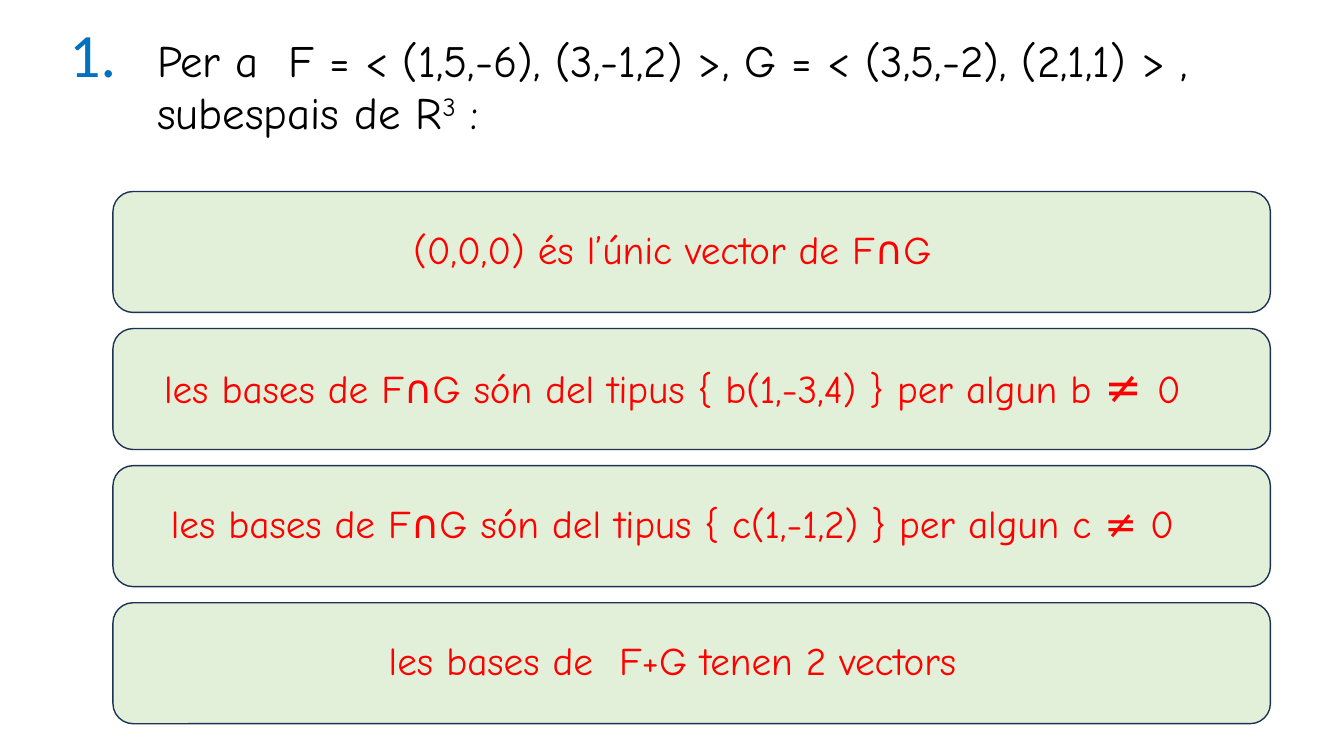
from dataclasses import dataclass

from pptx import Presentation
from pptx.dml.color import RGBColor
from pptx.enum.shapes import MSO_SHAPE
from pptx.enum.text import MSO_ANCHOR, PP_ALIGN
from pptx.util import Inches, Pt


@dataclass(frozen=True)
class Theme:
    number_font: str = "Calibri"
    text_font: str = "Comic Neue"
    number_color: RGBColor = RGBColor(0x00, 0x70, 0xC0)
    question_color: RGBColor = RGBColor(0x00, 0x00, 0x00)
    answer_color: RGBColor = RGBColor(0xFF, 0x00, 0x00)
    answer_fill: RGBColor = RGBColor(0xE2, 0xF0, 0xD9)
    answer_line: RGBColor = RGBColor(0x1E, 0x32, 0x56)
    number_size: Pt = Pt(44)
    question_size: Pt = Pt(32)
    symbol_size: Pt = Pt(32)
    answer_size: Pt = Pt(28)


theme = Theme()


def add_span(para, text, size=None):
    span = para.add_run()
    span.text = text
    if size is not None:
        span.font.size = size
    return span


deck = Presentation()
deck.slide_width = Inches(13.33)
deck.slide_height = Inches(7.5)
page = deck.slides.add_slide(deck.slide_layouts[6])

# Question: the number hangs to the left of the wording
question = page.shapes.add_textbox(Inches(0.59), Inches(0.09), Inches(12.36), Inches(1.45))
frame = question.text_frame
frame.word_wrap = True
frame.vertical_anchor = MSO_ANCHOR.MIDDLE
para = frame.paragraphs[0]
para.line_spacing = 0.9
hang = Inches(0.87)
para_properties = para._p.get_or_add_pPr()
para_properties.set("marL", str(hang))
para_properties.set("indent", str(-hang))
para.font.name = theme.text_font
para.font.size = theme.question_size
para.font.color.rgb = theme.question_color

number = add_span(para, "1.\t", theme.number_size)
number.font.name = theme.number_font
number.font.color.rgb = theme.number_color
add_span(para, "Per a  F = < (1,5,-6), (3,-1,2) >, G = < (3,5,-2), (2,1,1) > ,")
para.add_line_break()
add_span(para, "subespais de R")
exponent = add_span(para, "3")
exponent._r.get_or_add_rPr().set("baseline", "30000")
add_span(para, " :")

# Answers: each is a list of (text, size), where None keeps the answer size
answers = [
    [("(0,0,0) és l’únic vector de F∩G", None)],
    [
        ("les bases de F∩G són del tipus { b(1,-3,4) } per algun b ", None),
        ("≠ ", theme.symbol_size),
        ("0", None),
    ],
    [("les bases de F∩G són del tipus { c(1,-1,2) } per algun c ≠ 0", None)],
    [("les bases de  F+G tenen 2 vectors", None)],
]
first_top, pitch = 1.9, 1.36

for row, spans in enumerate(answers):
    box = page.shapes.add_shape(
        MSO_SHAPE.ROUNDED_RECTANGLE,
        Inches(1.12), Inches(first_top + row * pitch), Inches(11.48), Inches(1.2),
    )
    box.shadow.inherit = False
    box.fill.solid()
    box.fill.fore_color.rgb = theme.answer_fill
    box.line.color.rgb = theme.answer_line
    box.line.width = Pt(1)

    frame = box.text_frame
    frame.word_wrap = True
    frame.vertical_anchor = MSO_ANCHOR.MIDDLE
    frame.margin_right = Inches(0.48)
    para = frame.paragraphs[0]
    para.alignment = PP_ALIGN.CENTER
    para.line_spacing = 0.9
    para.space_before = Pt(10)
    para.font.name = theme.text_font
    para.font.size = theme.answer_size
    para.font.color.rgb = theme.answer_color
    for text, size in spans:
        add_span(para, text, size)

deck.save("out.pptx")
